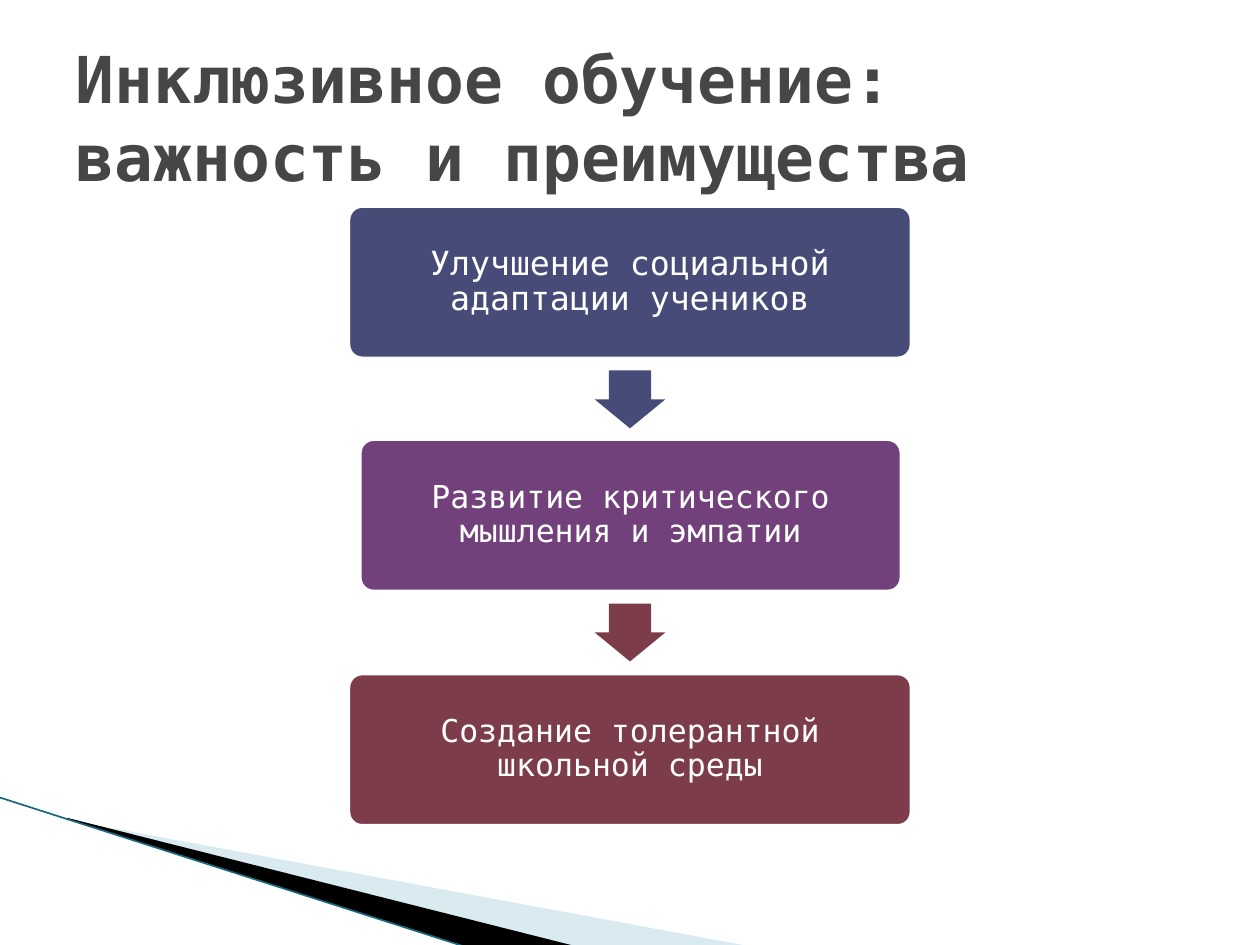
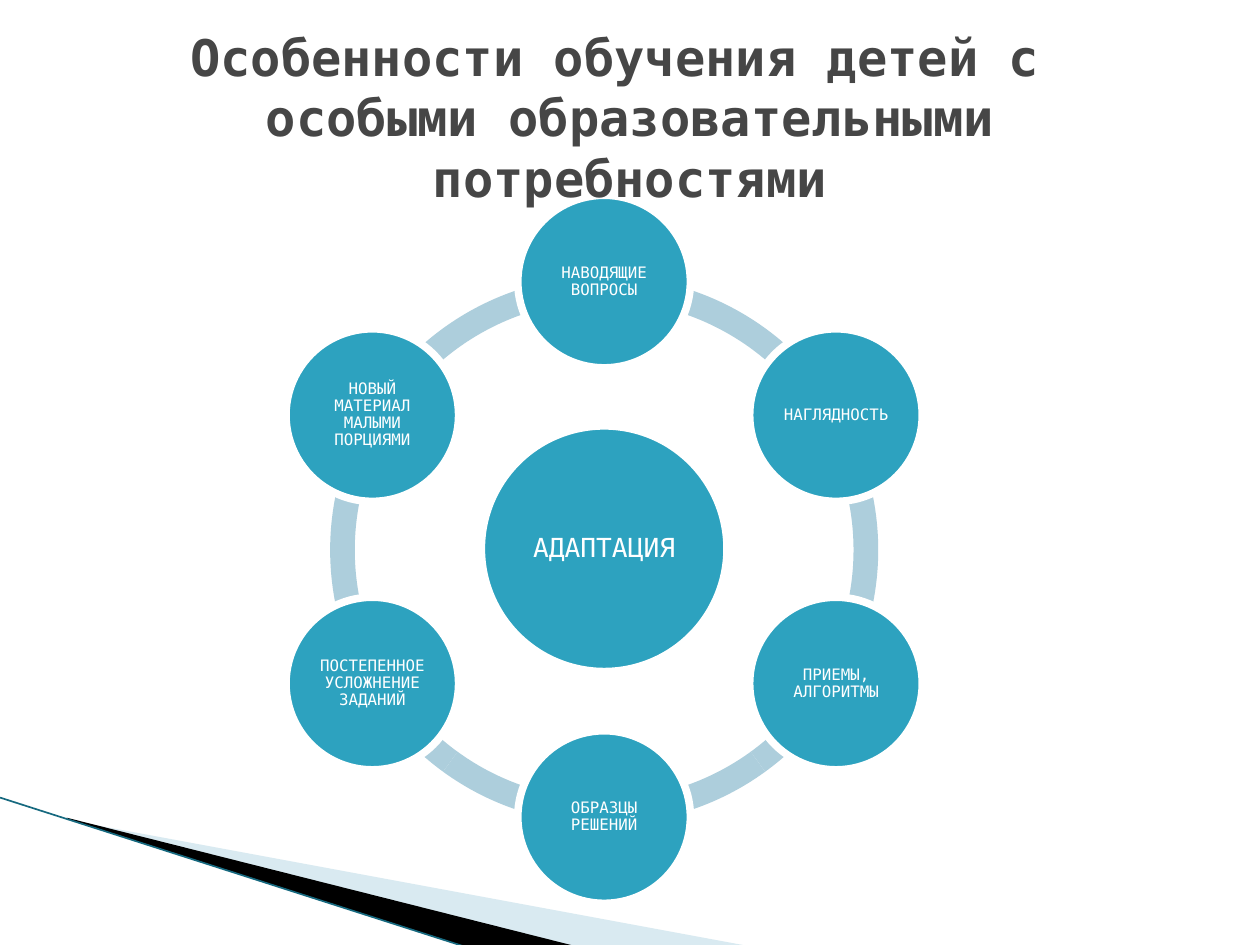
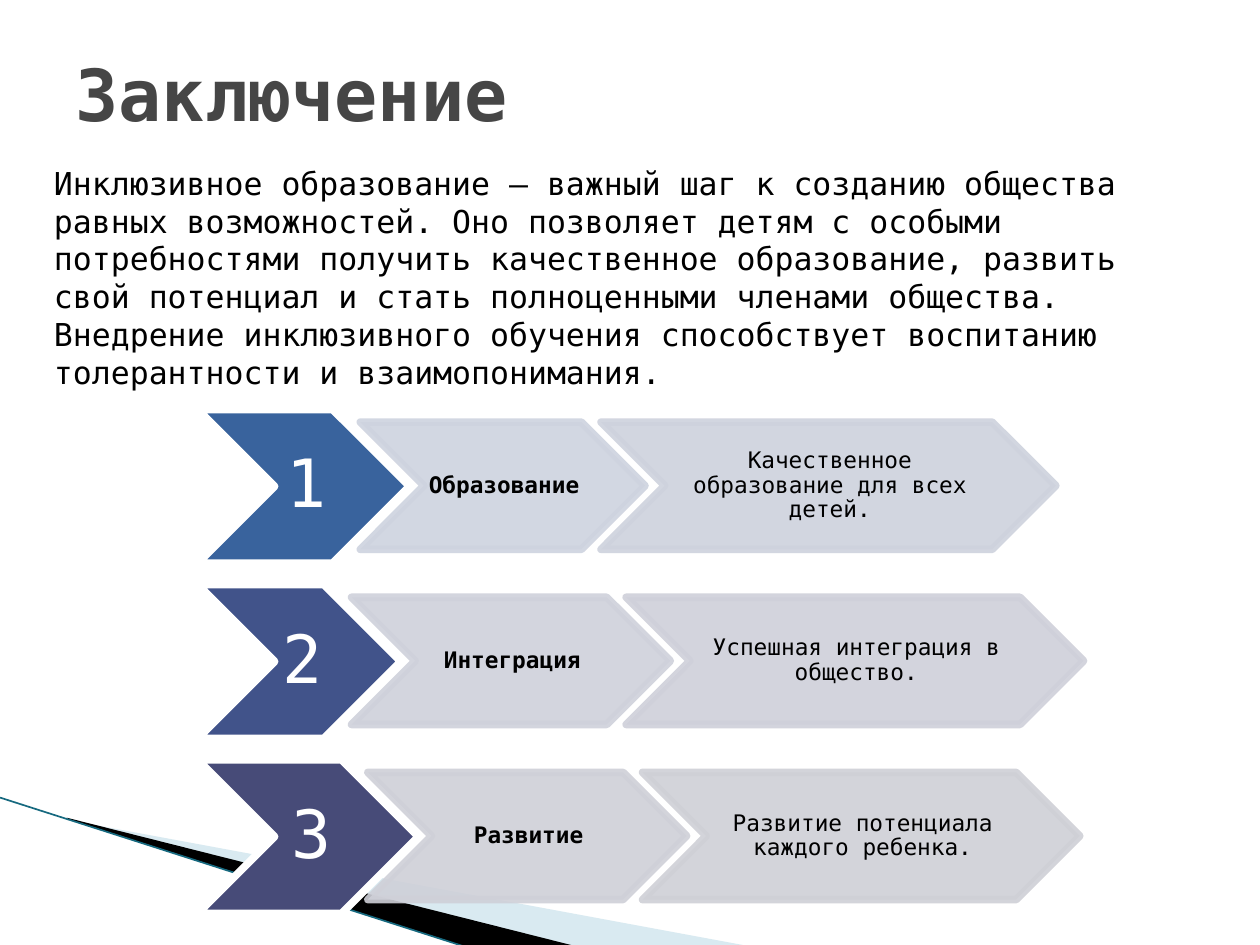
"""Build three slides on inclusive education."""
import math
from dataclasses import dataclass

from lxml import etree
from pptx import Presentation
from pptx import util as u
from pptx.dml import color
from pptx.enum import shapes, text
from pptx.oxml import ns

PX = u.Inches(1) // 100
KIND = shapes.MSO_SHAPE
ALIGN = text.PP_ALIGN
ANCHOR = text.MSO_ANCHOR


@dataclass(frozen=True)
class Theme:
    """Colours, type sizes and line widths of the presentation."""
    font: str = "DejaVu Sans Mono"
    title: str = "464646"
    ink: str = "000000"
    paper: str = "FFFFFF"
    wedge: str = "A0CBDC"
    wedge_line: str = "16697F"
    accent: str = "2DA2BF"
    ring: str = "ADCEDC"
    indigo: str = "474B78"
    violet: str = "72417B"
    wine: str = "7D3C4A"
    body_size: int = 18
    hub_size: int = 15
    node_size: int = 9
    number_size: int = 38
    detail_size: int = 13
    outline: float = 4.33
    hairline: float = 0.95


class Deck:
    """Holds the theme and the current slide, and draws each kind of element."""

    def __init__(self, theme):
        self.theme = theme
        self.presentation = Presentation()
        self.presentation.slide_width = 1000 * PX
        self.presentation.slide_height = 750 * PX
        self.slide = None

    def start_slide(self, title, size, height=125, align=ALIGN.LEFT):
        """Add a slide with the corner wedge and its title."""
        self.slide = self.presentation.slides.add_slide(self.presentation.slide_layouts[5])
        self.wedge()
        shape = self.slide.shapes.title
        shape.left, shape.top, shape.width, shape.height = 50 * PX, 30 * PX, 900 * PX, height * PX
        self.label(shape, title, size, self.theme.title, bold=True, align=align)

    def finish_slide(self):
        """Bring the title to the front."""
        self.slide.shapes.element.append(self.slide.shapes.title.element)

    def wedge(self):
        """Draw the corner decoration shared by all slides."""
        theme = self.theme
        self.polygon([(55, 651), (595, 751), (456, 751), (55, 650)], theme.wedge, 40)
        self.polygon([(53, 649), (457, 751), (372, 752), (54, 650)], theme.ink)
        connector = self.slide.shapes.add_connector(
            shapes.MSO_CONNECTOR.STRAIGHT, 0, 633 * PX, 371 * PX, 752 * PX)
        connector.line.color.rgb = color.RGBColor.from_string(theme.wedge_line)
        connector.line.width = u.Pt(theme.hairline)
        etree.SubElement(connector.element.spPr, ns.qn("a:effectLst"))

    def polygon(self, points, fill, opacity=100):
        """Draw a filled outline through the points."""
        builder = self.slide.shapes.build_freeform(*points[0], scale=float(PX))
        builder.add_line_segments(points[1:], close=True)
        self.paint(builder.convert_to_shape(), fill, opacity=opacity)

    def block(self, kind, box, fill, line=None, opacity=100, adjustments=()):
        """Draw a preset shape and return it."""
        shape = self.slide.shapes.add_shape(kind, *(length * PX for length in box))
        for index, value in enumerate(adjustments):
            shape.adjustments[index] = value
        self.paint(shape, fill, line, opacity)
        return shape

    def paint(self, shape, fill, line=None, opacity=100):
        """Set fill, outline and opacity of a shape."""
        shape.shadow.inherit = False
        shape.fill.solid()
        shape.fill.fore_color.rgb = color.RGBColor.from_string(fill)
        if line:
            shape.line.color.rgb = color.RGBColor.from_string(line)
            shape.line.width = u.Pt(self.theme.outline)
        else:
            shape.line.fill.background()
        if opacity < 100:
            for value in list(shape.element.spPr.iter(ns.qn("a:srgbClr"))):
                etree.SubElement(value, ns.qn("a:alpha"), val=str(opacity * 1000))

    def label(self, shape, words, size, ink, bold=False, align=ALIGN.CENTER,
              margins=(10, 5, 10, 5), spacing=1.0, anchor=ANCHOR.MIDDLE):
        """Put one formatted run of words into a shape."""
        frame = shape.text_frame
        frame.word_wrap = True
        frame.auto_size = text.MSO_AUTO_SIZE.NONE
        frame.vertical_anchor = anchor
        (frame.margin_left, frame.margin_top, frame.margin_right,
         frame.margin_bottom) = (margin * PX for margin in margins)
        paragraph = frame.paragraphs[0]
        paragraph.alignment = align
        paragraph.line_spacing = spacing
        run = paragraph.add_run()
        run.text = words
        run.font.name = self.theme.font
        run.font.size = u.Pt(size)
        run.font.bold = bold
        run.font.color.rgb = color.RGBColor.from_string(ink)

    def body(self, box, words):
        """Add a left-aligned text box."""
        shape = self.slide.shapes.add_textbox(*(length * PX for length in box))
        self.label(shape, words, self.theme.body_size, self.theme.ink,
                   align=ALIGN.LEFT, anchor=ANCHOR.TOP)

    def disc(self, center_x, center_y, diameter, words, size, margin):
        """Draw a labelled circle around a centre."""
        box = (round(center_x - diameter / 2), round(center_y - diameter / 2), diameter, diameter)
        shape = self.block(KIND.OVAL, box, self.theme.accent, self.theme.paper)
        self.label(shape, words, size, self.theme.paper, margins=(margin,) * 4, spacing=0.9)


def benefits_slide(deck):
    """Three benefits joined by arrows."""
    theme = deck.theme
    deck.start_slide("Инклюзивное обучение: важность и преимущества", 36.9)
    benefits = [
        ("Улучшение социальной адаптации учеников", 19, 450, theme.indigo, theme.indigo),
        ("Развитие критического мышления и эмпатии", 18, 433, theme.violet, theme.wine),
        ("Создание толерантной школьной среды", 18, 450, theme.wine, None),
    ]
    for index, (words, size, width, fill, arrow_fill) in enumerate(benefits):
        drop = index * 371 // 2
        box = (500 - width // 2, 162 + drop, width, 124)
        shape = deck.block(KIND.ROUNDED_RECTANGLE, box, fill, theme.paper, adjustments=[0.1])
        deck.label(shape, words, size, theme.paper, margins=(8,) * 4, spacing=0.9)
        if arrow_fill:
            arrow = deck.block(KIND.RIGHT_ARROW, (477, 289 + drop, 46, 56), arrow_fill,
                               adjustments=[0.6, 0.5])
            arrow.rotation = 90
    deck.finish_slide()


def adaptation_slide(deck):
    """A hub inside a ring of six teaching methods."""
    theme = deck.theme
    deck.start_slide("Особенности обучения детей с  особыми образовательными потребностями",
                     28.8, align=ALIGN.CENTER)
    degree = 0.6
    bounds = list(range(18, 199, 36))
    for start, end in zip(bounds, bounds[1:] + bounds[:1]):
        deck.block(KIND.BLOCK_ARC, (262, 219, 435, 435), theme.ring,
                   adjustments=[start * degree, end * degree, 0.045])
    center_x, center_y, radius = 479.5, 436, 212.5
    deck.disc(center_x, center_y, 195, "АДАПТАЦИЯ", theme.hub_size, 2)
    methods = ["НАВОДЯЩИЕ ВОПРОСЫ", "НАГЛЯДНОСТЬ", "ПРИЕМЫ, АЛГОРИТМЫ", "ОБРАЗЦЫ РЕШЕНИЙ",
               "ПОСТЕПЕННОЕ УСЛОЖНЕНИЕ ЗАДАНИЙ", "НОВЫЙ МАТЕРИАЛ МАЛЫМИ ПОРЦИЯМИ"]
    for index, words in enumerate(methods):
        angle = math.tau * index / len(methods)
        deck.disc(center_x + radius * math.sin(angle), center_y - radius * math.cos(angle),
                  137, words, theme.node_size, 1)
    deck.finish_slide()


def conclusion_slide(deck):
    """Closing statement and three rows of chevrons."""
    theme = deck.theme
    deck.start_slide("Заключение", 41, height=87)
    rows = [
        (("1", 157, 168, "39639D"), ("Образование", 286, 226, "CED3DF"),
         ("Качественное образование для всех детей.", 477, 361, "CED2DD")),
        (("2", 157, 161, "41538A"), ("Интеграция", 279, 253, "CFD1DB"),
         ("Успешная интеграция в общество.", 497, 363, "CFD0DA")),
        (("3", 157, 175, theme.indigo), ("Развитие", 292, 253, "CFD0D8"),
         ("Развитие потенциала каждого ребенка.", 510, 347, "CFD0D6")),
    ]
    for index, (number, *details) in enumerate(rows):
        top = 325 + index * 139
        words, left, width, fill = number
        shape = deck.block(KIND.CHEVRON, (left, top, width, 122), fill, theme.paper)
        deck.label(shape, words, theme.number_size, theme.paper, margins=(5, 3, 0, 3), spacing=0.9)
        for column, (words, left, width, fill) in enumerate(details):
            shape = deck.block(KIND.CHEVRON, (left, top + 10, width, 101), fill, fill, opacity=90)
            deck.label(shape, words, theme.detail_size, theme.ink, bold=column == 0,
                       margins=(2, 1, 0, 1), spacing=0.9)
    deck.finish_slide()
    deck.body((33, 125, 925, 162),
              "Инклюзивное образование – важный шаг к созданию общества равных возможностей. "
              "Оно позволяет детям с особыми потребностями получить качественное образование, "
              "развить свой потенциал и стать полноценными членами общества. Внедрение "
              "инклюзивного обучения способствует воспитанию толерантности и взаимопонимания.")


def main():
    """Build and save the presentation."""
    deck = Deck(Theme())
    benefits_slide(deck)
    adaptation_slide(deck)
    conclusion_slide(deck)
    deck.presentation.save("out.pptx")


if __name__ == "__main__":
    main()
